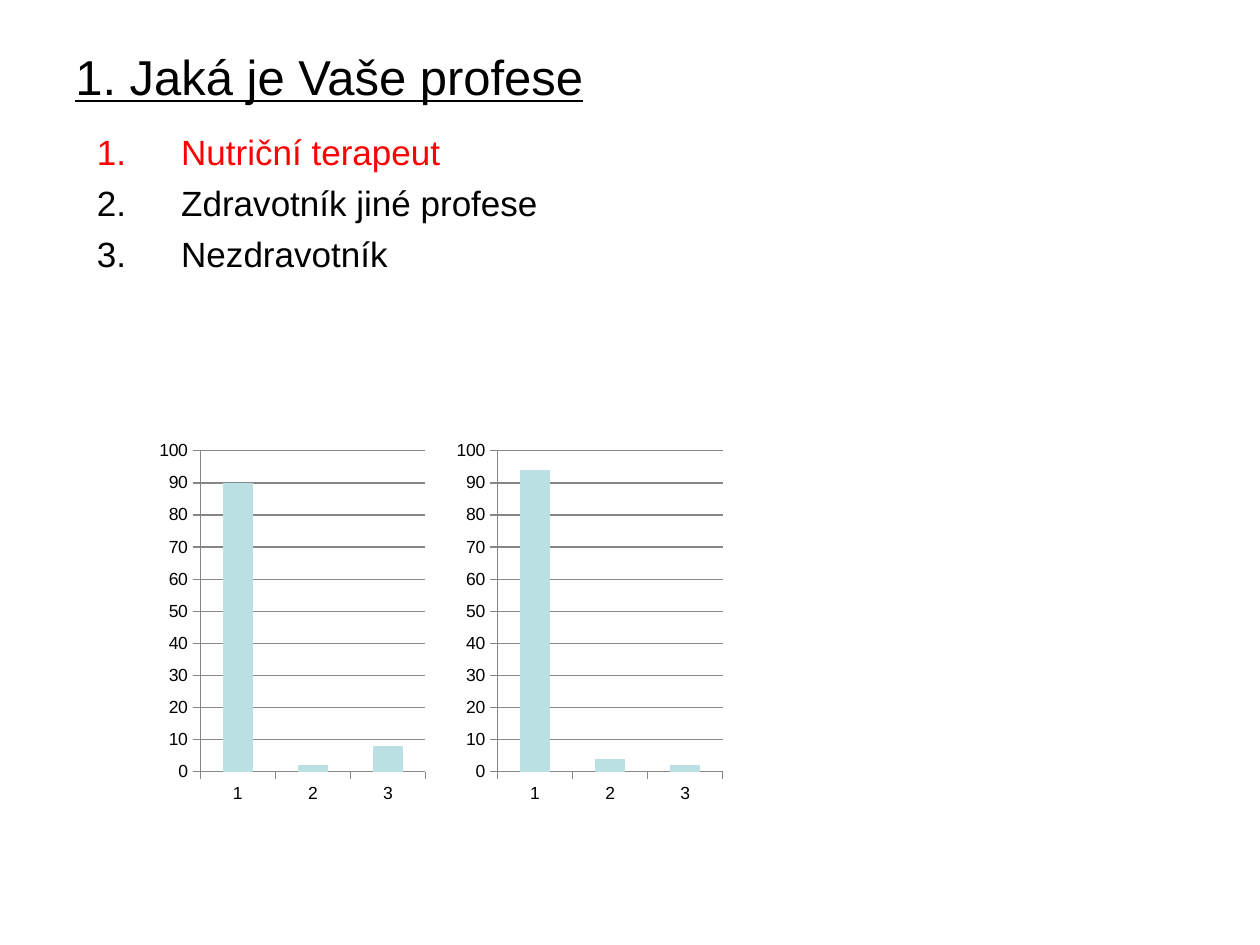
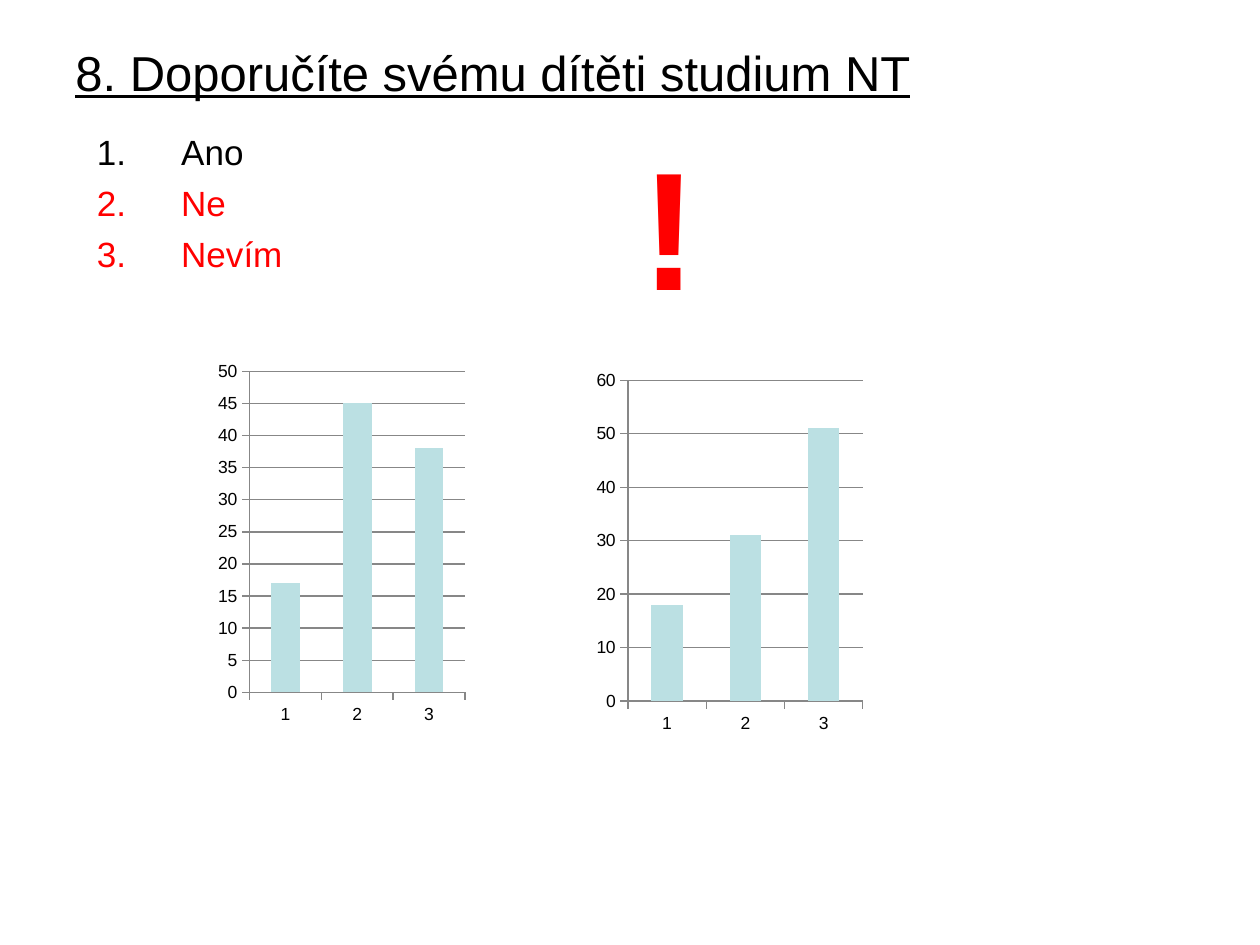
from pptx import Presentation
from pptx.chart.data import CategoryChartData as ChartData
from pptx.dml.color import RGBColor
from pptx.enum.chart import XL_CHART_TYPE as Kind, XL_TICK_MARK as Tick
from pptx.enum.text import MSO_ANCHOR as Anchor, PP_ALIGN as Align
from pptx.oxml.ns import qn
from pptx.util import Inches, Pt
from lxml.etree import SubElement

BLACK = RGBColor(0, 0, 0)
RED = RGBColor(255, 0, 0)
TEAL = RGBColor(0xBB, 0xE0, 0xE3)
GREY = RGBColor(0x87, 0x87, 0x87)
FONT = "Arial"

TITLE = {"size": Pt(28), "underline": True}
ITEM = {"size": Pt(20)}
MARK = {"size": Pt(96), "bold": True}
LABEL = {"size": Pt(10)}


def style(font, form, color=BLACK):
    for key, value in {"name": FONT, **form}.items():
        setattr(font, key, value)
    font.color.rgb = color


def add_box(slide, area):
    frame = slide.shapes.add_textbox(*map(Inches, area)).text_frame
    frame.word_wrap = True
    return frame


def add_line(para, text, form, color=BLACK):
    run = para.add_run()
    run.text = text
    style(run.font, form, color)


def add_title(slide, text, area):
    frame = add_box(slide, area)
    frame.vertical_anchor = Anchor.MIDDLE
    add_line(frame.paragraphs[0], text, TITLE)


def add_list(slide, items, area):
    """Numbered answers with a hanging indent."""
    frame = add_box(slide, area)
    for i, (text, color) in enumerate(items):
        para = frame.add_paragraph() if i else frame.paragraphs[0]
        para.space_before = Pt(5)
        props = para._p.get_or_add_pPr()
        props.set("marL", str(Inches(0.67)))
        props.set("indent", str(-Inches(0.67)))
        SubElement(props, qn("a:buAutoNum"), type="arabicPeriod")
        add_line(para, text, ITEM, color)


def add_mark(slide, text, area):
    para = add_box(slide, area).paragraphs[0]
    para.alignment = Align.CENTER
    add_line(para, text, MARK, RED)


def add_bars(slide, values, area, top, step):
    data = ChartData()
    data.categories = ["1", "2", "3"]
    data.add_series("Series 1", values)
    chart = slide.shapes.add_chart(
        Kind.COLUMN_CLUSTERED, *map(Inches, area), data).chart
    chart.has_legend = chart.has_title = False
    style(chart.font, LABEL)

    # Bars
    plot = chart.plots[0]
    plot.gap_width = 150
    plot.vary_by_categories = False
    fill = plot.series[0].format.fill
    fill.solid()
    fill.fore_color.rgb = TEAL

    # Axes and grid
    axis = chart.value_axis
    scale = {"minimum_scale": 0, "maximum_scale": top, "major_unit": step,
             "has_major_gridlines": True}
    for key, value in scale.items():
        setattr(axis, key, value)
    for part in (axis, chart.category_axis):
        part.major_tick_mark = Tick.OUTSIDE
        part.minor_tick_mark = Tick.NONE
    for part in (axis, chart.category_axis, axis.major_gridlines):
        part.format.line.color.rgb = GREY
        part.format.line.width = Pt(0.75)


def main():
    deck = Presentation()
    deck.slide_width, deck.slide_height = Inches(10), Inches(7.5)
    blank = deck.slide_layouts[6]

    # Profession
    slide = deck.slides.add_slide(blank)
    add_title(slide, "1. Jaká je Vaše profese", (0.5, 0.3, 9, 0.61))
    add_list(slide, [("Nutriční terapeut", RED),
                     ("Zdravotník jiné profese", BLACK),
                     ("Nezdravotník", BLACK)], (0.67, 0.99, 6.93, 1.18))
    add_bars(slide, (94, 4, 2), (3.58, 3.44, 2.2, 3), 100, 10)
    add_bars(slide, (90, 2, 8), (1.22, 3.44, 2.2, 3), 100, 10)

    # Recommending the studies
    slide = deck.slides.add_slide(blank)
    add_title(slide, "8. Doporučíte svému dítěti studium NT",
              (0.5, 0.3, 9.15, 0.54))
    add_list(slide, [("Ano", BLACK), ("Ne", RED), ("Nevím", RED)],
             (0.67, 0.99, 4.5, 1.34))
    add_bars(slide, (18, 31, 51), (4.69, 2.88, 2.2, 3), 60, 10)
    add_bars(slide, (17, 45, 38), (1.69, 2.81, 2.04, 3), 50, 5)
    add_mark(slide, "!", (4.29, 0.92, 2.05, 1.72))

    deck.save("out.pptx")


if __name__ == "__main__":
    main()
